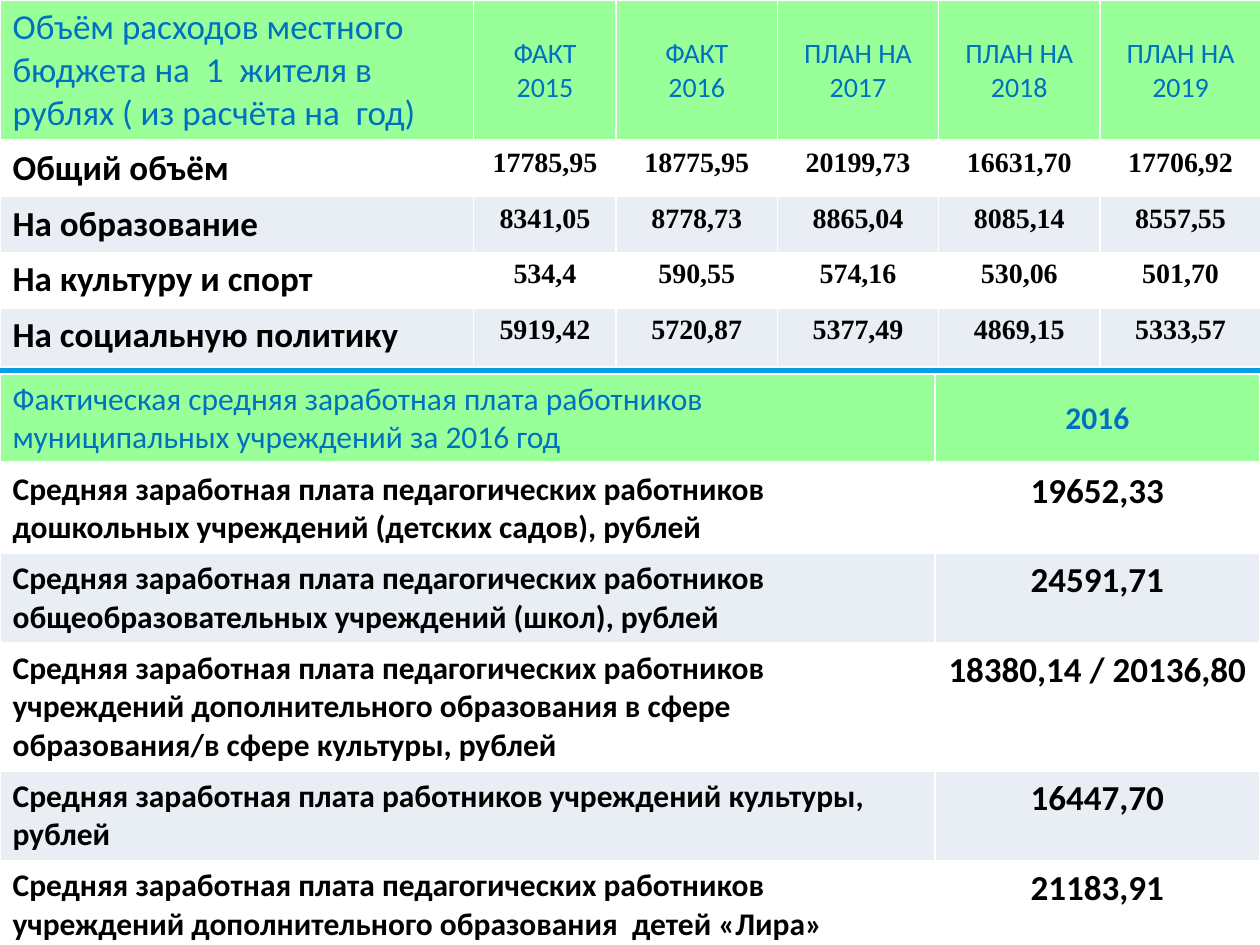
import pptx
import pptx.dml.color
import pptx.enum.text
import pptx.oxml
import pptx.oxml.ns
import pptx.util
from lxml import etree

Inches = pptx.util.Inches
CENTER = pptx.enum.text.PP_ALIGN.CENTER
MIDDLE = pptx.enum.text.MSO_ANCHOR.MIDDLE

HEADER_GREEN, HEADER_BLUE = "99FF99", "0070C0"
BANDS = ("FFFFFF", "E9EDF4")
BACKDROP = ((0, "03D4A8"), (25, "21D6E0"), (75, "0087E6"), (100, "005CBF"))

EXPENSE_HEADER = ["Объём расходов местного бюджета на  1  жителя в рублях ( из расчёта на  год)",
                  "ФАКТ 2015", "ФАКТ\n2016", "ПЛАН НА 2017", "ПЛАН НА 2018", "ПЛАН НА 2019"]
EXPENSES = [
    ["Общий объём", "17785,95", "18775,95", "20199,73", "16631,70", "17706,92"],
    ["На образование", "8341,05", "8778,73", "8865,04", "8085,14", "8557,55"],
    ["На культуру и спорт", "534,4", "590,55", "574,16", "530,06", "501,70"],
    ["На социальную политику", "5919,42", "5720,87", "5377,49", "4869,15", "5333,57"],
]
SALARY_HEADER = ["Фактическая средняя заработная плата работников муниципальных учреждений за 2016 год",
                 "2016"]
SALARIES = [
    ["Средняя заработная плата педагогических работников дошкольных учреждений "
     "(детских садов), рублей", "19652,33"],
    ["Средняя заработная плата педагогических работников общеобразовательных учреждений "
     "(школ), рублей", "24591,71"],
    ["Средняя заработная плата педагогических работников учреждений дополнительного "
     "образования в сфере образования/в сфере культуры, рублей", "18380,14 / 20136,80"],
    ["Средняя заработная плата работников учреждений культуры, рублей", "16447,70"],
    ["Средняя заработная плата педагогических работников учреждений дополнительного "
     "образования  детей «Лира»", "21183,91"],
]


def rgb(color):
    return pptx.dml.color.RGBColor.from_string(color)


def write(cell, text, size=18, color="000000", bold=False, font="Calibri", align=None):
    cell.text_frame.text = text
    for paragraph in cell.text_frame.paragraphs:
        paragraph.alignment = align
        for run in paragraph.runs:
            run.font.name = font
            run.font.size = pptx.util.Pt(size)
            run.font.bold = bold
            run.font.color.rgb = rgb(color)


def paint_cell(cell, fill, bottom_width=1):
    """White borders first, then the fill, as the schema orders them."""
    properties = cell._tc.get_or_add_tcPr()
    for side, width in (("L", 1), ("R", 1), ("T", 1), ("B", bottom_width)):
        border = etree.SubElement(properties, pptx.oxml.ns.qn(f"a:ln{side}"),
                                  w=str(pptx.util.Pt(width)))
        solid = etree.SubElement(border, pptx.oxml.ns.qn("a:solidFill"))
        etree.SubElement(solid, pptx.oxml.ns.qn("a:srgbClr"), val="FFFFFF")
    cell.fill.solid()
    cell.fill.fore_color.rgb = rgb(fill)


def add_budget_table(slide, top, widths, heights, header, body,
                     header_styles, body_styles):
    """Each style pair formats the label column and the value columns."""
    table = slide.shapes.add_table(len(heights), len(widths), 0, Inches(top),
                                   Inches(sum(widths)), Inches(sum(heights))).table
    table.horz_banding = False
    for column, width in zip(table.columns, widths):
        column.width = Inches(width)
    for row, height in zip(table.rows, heights):
        row.height = Inches(height)

    for row_number, texts in enumerate([header] + body):
        is_header = row_number == 0
        styles = header_styles if is_header else body_styles
        for column_number, text in enumerate(texts):
            cell = table.cell(row_number, column_number)
            is_value = column_number > 0
            if is_header:
                paint_cell(cell, HEADER_GREEN, bottom_width=3)
            else:
                paint_cell(cell, BANDS[(row_number - 1) % 2])
            if is_header and is_value:
                cell.vertical_anchor = MIDDLE
            write(cell, text, align=CENTER if is_value else None, **styles[is_value])


def set_backdrop(slide):
    fill = slide.background.fill
    fill.gradient()
    fill.gradient_angle = 90  # counter-clockwise: the first stop is at the bottom
    stops = slide._element.find(".//" + pptx.oxml.ns.qn("a:gsLst"))
    for old_stop in list(stops):
        stops.remove(old_stop)
    for percent, color in BACKDROP:
        stop = etree.SubElement(stops, pptx.oxml.ns.qn("a:gs"), pos=str(percent * 1000))
        etree.SubElement(stop, pptx.oxml.ns.qn("a:srgbClr"), val=color)


def main():
    deck = pptx.Presentation()
    deck.slide_width, deck.slide_height = Inches(10), Inches(7.5)
    slide = deck.slides.add_slide(deck.slide_layouts[6])
    set_backdrop(slide)

    # Local budget expenses per resident
    add_budget_table(
        slide, 0, [3.76, 1.13] + [1.28] * 4, [1.07] + [0.42] * 3 + [0.47],
        EXPENSE_HEADER, EXPENSES,
        header_styles=(dict(size=20, color=HEADER_BLUE), dict(size=16, color=HEADER_BLUE)),
        body_styles=(dict(size=20, bold=True),
                     dict(size=16, bold=True, font="Times New Roman")))

    # Average salaries in municipal institutions
    add_budget_table(
        slide, 2.97, [7.42, 2.58], [0.68] * 3 + [0.97] + [0.68] * 2,
        SALARY_HEADER, SALARIES,
        header_styles=(dict(color=HEADER_BLUE), dict(color=HEADER_BLUE, bold=True)),
        body_styles=(dict(bold=True), dict(size=20, bold=True)))

    deck.save("out.pptx")


if __name__ == "__main__":
    main()
